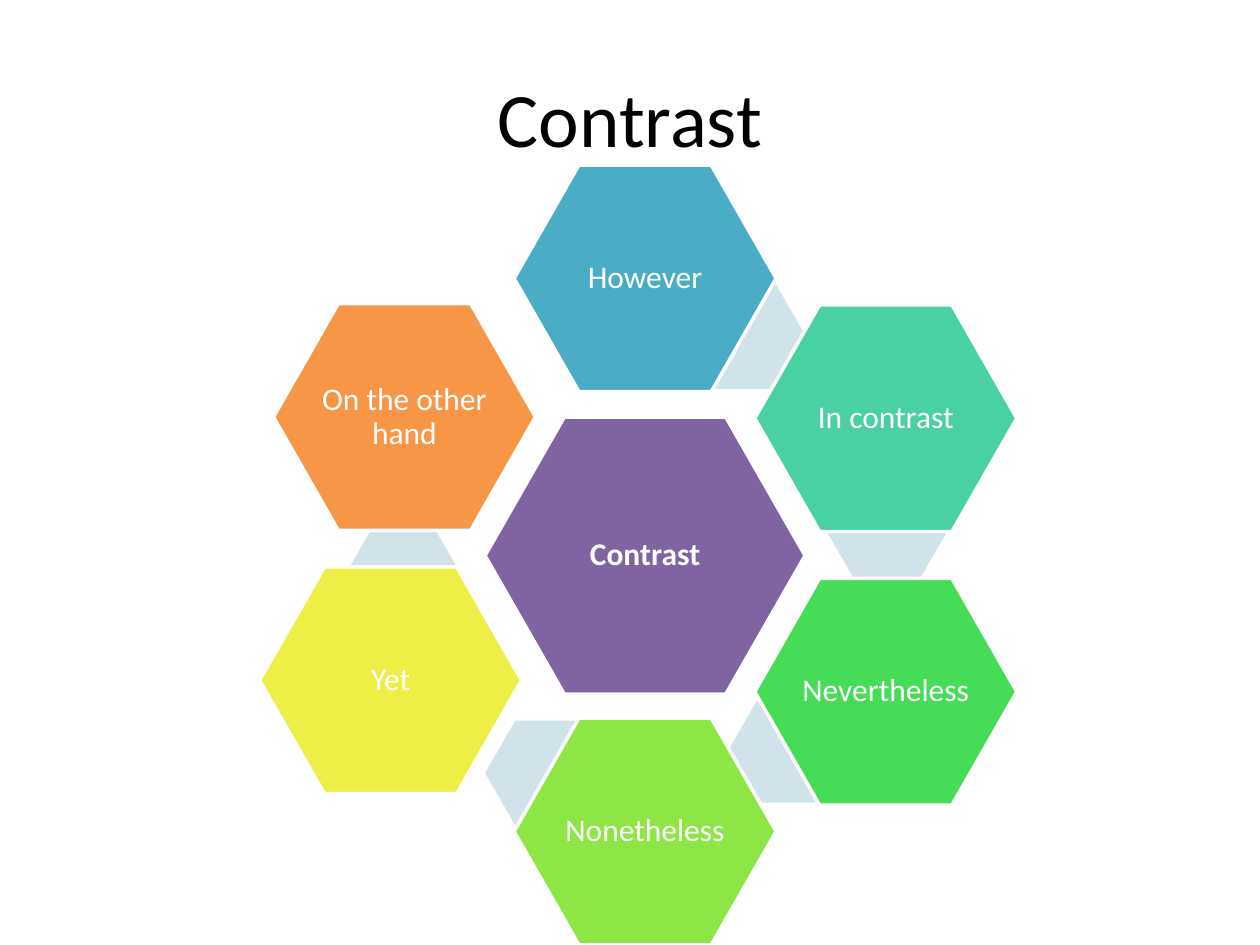
from pptx import Presentation
from pptx.dml.color import RGBColor
from pptx.enum.shapes import MSO_SHAPE as SHAPE
from pptx.enum.text import MSO_ANCHOR as ANCHOR, PP_ALIGN as ALIGN
from pptx.util import Inches, Pt

FONT = "Calibri"
WHITE = "FFFFFF"
LINK_COLOR = "D0E3EA"
CORE_SIZE = (2.54, 2.2)
PETAL_SIZE = (2.08, 1.8)
LINK_SIZE = (0.96, 0.83)

# Label, fill, petal offset and link offset (None: no link) within the diagram
PETALS = [
    ("However", "4BACC6", (2.02, 0), (3.38, 0.95)),
    ("In contrast", "49D1A3", (3.93, 1.11), (4.5, 2.49)),
    ("Nevertheless", "47DC57", (3.93, 3.28), (3.72, 4.23)),
    ("Nonetheless", "8DE646", (2.02, 4.39), (1.79, 4.41)),
    ("Yet", "EEEF46", (0, 3.19), (0.66, 2.87)),
    ("On the other hand", "F79646", (0.11, 1.1), None),
]


def rgb(color):
    return RGBColor.from_string(color)


def write_text(tf, text, size, color, bold=False):
    tf.text = text
    tf.word_wrap = True
    tf.vertical_anchor = ANCHOR.MIDDLE
    p = tf.paragraphs[0]
    p.alignment = ALIGN.CENTER
    font = p.runs[0].font
    font.name, font.size, font.bold = FONT, Pt(size), bold
    font.color.rgb = rgb(color)
    return p


def add_hexagon(slide, left, top, size, color, adj):
    sp = slide.shapes.add_shape(
        SHAPE.HEXAGON, Inches(left), Inches(top), *map(Inches, size))
    sp.adjustments[0] = adj
    sp.shadow.inherit = False
    sp.fill.solid()
    sp.fill.fore_color.rgb = rgb(color)
    sp.line.fill.background()
    return sp


def add_label_hexagon(slide, left, top, size, color, text, bold=False):
    sp = add_hexagon(slide, left, top, size, color, 0.286)
    sp.line.color.rgb = rgb(WHITE)
    sp.line.width = Pt(2)
    tf = sp.text_frame
    tf.margin_left = tf.margin_right = Inches(0.03)
    tf.margin_top = tf.margin_bottom = Inches(0.03)
    write_text(tf, text, 18, WHITE, bold).line_spacing = 0.9


def add_title(slide, left, top, width, height):
    box = slide.shapes.add_textbox(*map(Inches, (left, top, width, height)))
    write_text(box.text_frame, "Contrast", 44, "000000")


def add_diagram(slide, left, top):
    # Centre
    add_label_hexagon(slide, left + 1.79, top + 2, CORE_SIZE,
                      "8064A2", "Contrast", bold=True)
    # Ring: each link lies behind its petal
    for text, color, (x, y), link in PETALS:
        if link:
            add_hexagon(slide, left + link[0], top + link[1],
                        LINK_SIZE, LINK_COLOR, 0.289)
        add_label_hexagon(slide, left + x, top + y, PETAL_SIZE, color, text)


def main():
    prs = Presentation()
    prs.slide_width, prs.slide_height = Inches(10), Inches(7.5)
    slide = prs.slides.add_slide(prs.slide_layouts[6])
    add_title(slide, 0.5, 0.3, 9, 1.25)
    add_diagram(slide, 2.06, 1.31)
    prs.save("out.pptx")


if __name__ == "__main__":
    main()
